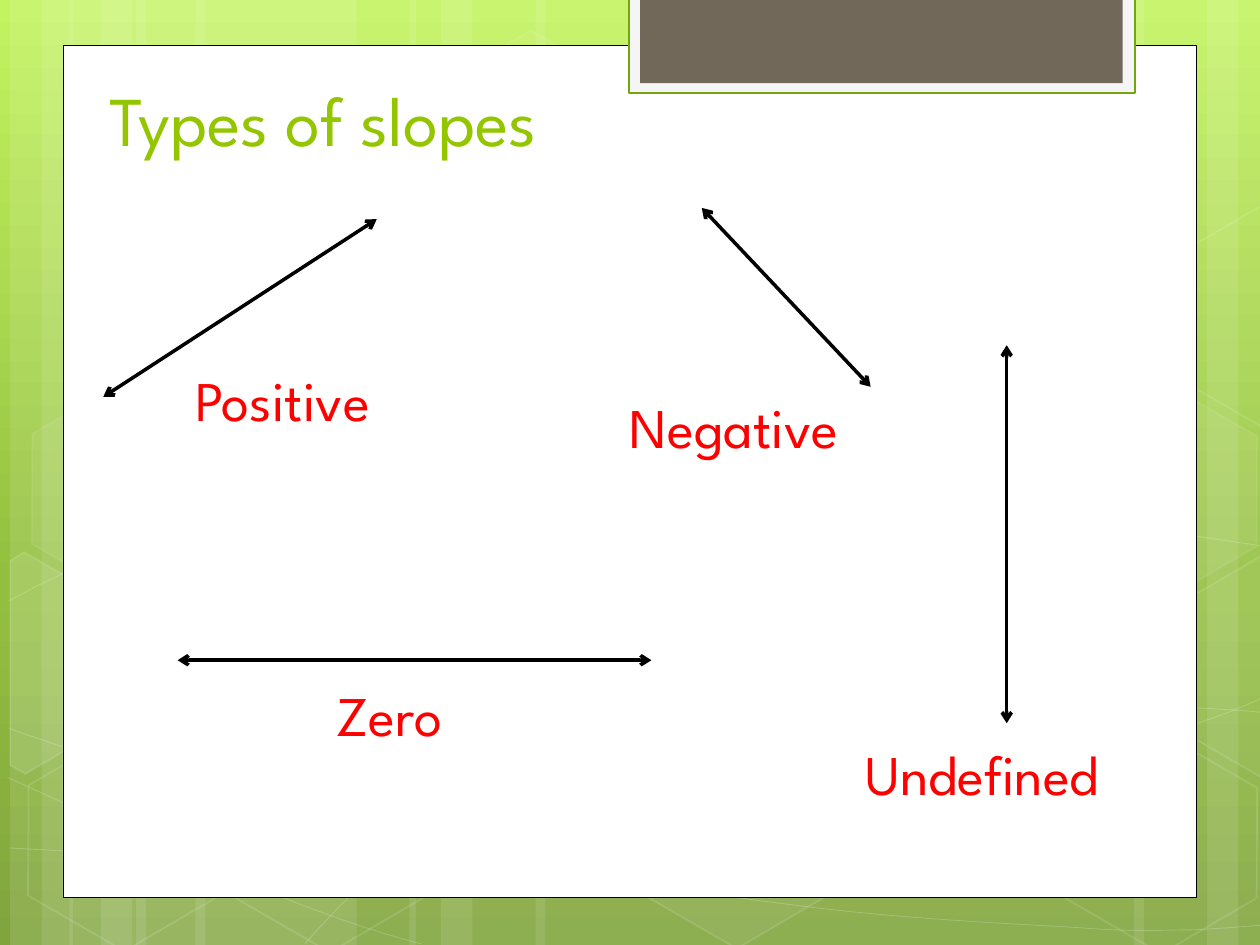
from copy import deepcopy
from math import cos, radians, sin
from pptx import Presentation
from pptx import util as u
from pptx.dml.color import RGBColor
from pptx.enum import shapes, text
from pptx.oxml.ns import qn
from lxml import etree

FONT = "League Spartan"
COLORS = {"white": "FFFFFF", "black": "000000", "frame": "F5F5F5", "edge": "74A510",
          "tab": "71685A", "title": "94C600", "label": "FF0000"}
GRADIENT = [(0, "C3F35F"), (0.62, "93BF3F"), (1, "81A53E")]
TILT = 30

STRIPES = [(1.08, 1.75), (0.08, 0.5), (0.33, 0.83), (1.55, 1.75), (0.55, 0.5), (0.8, 0.83),
           (7.33, 1.75), (9.58, 0.5), (9, 0.83), (4.25, 3.08), (3.25, 0.5), (3.5, 0.83)]
CURVES = [
    [(0.07, 6.73), (0.61, 6.76), (1.15, 6.79), (1.9, 6.78), (2.65, 6.77), (3.58, 6.75),
     (4.58, 6.65), (5.58, 6.55), (7, 6.36), (7.92, 6.17), (8.83, 5.98), (9.77, 5.68),
     (10.07, 5.51)],
    [(0.07, 4.77), (0.36, 4.61), (0.65, 4.46), (1.21, 4.31), (1.78, 4.16), (2.59, 3.94),
     (3.47, 3.87), (4.36, 3.8), (5.44, 3.79), (6.54, 3.87), (7.64, 3.95), (9.47, 4.26),
     (10.07, 4.34)],
    [(0.06, 6.17), (1.27, 6.72), (2.47, 7.27), (3.34, 7.49)],
    [(0.07, 5.78), (0.38, 5.89), (0.7, 6), (1.28, 6.16), (1.86, 6.31), (2.73, 6.56),
     (3.57, 6.73), (4.4, 6.9), (5.45, 7.08), (6.28, 7.18), (7.11, 7.29), (8, 7.33),
     (8.53, 7.36), (9.05, 7.4), (9.19, 7.38), (9.45, 7.38), (9.71, 7.37), (9.89, 7.35),
     (10.07, 7.34)],
    [(2.42, 7.49), (2.6, 7.29), (2.78, 7.09), (3.02, 6.91), (3.26, 6.73), (3.6, 6.53),
     (3.88, 6.39), (4.16, 6.25), (4.33, 6.19), (4.7, 6.09), (5.06, 5.99), (5.73, 5.85),
     (6.08, 5.78), (6.44, 5.71), (6.49, 5.71), (6.8, 5.69), (7.11, 5.66), (7.6, 5.63),
     (7.94, 5.62), (8.29, 5.61), (8.86, 5.62), (8.86, 5.62), (9.08, 5.62), (9.31, 5.62),
     (9.53, 5.62), (9.71, 5.63), (9.88, 5.64), (9.97, 5.65), (10.06, 5.66), (10.03, 5.65),
     (10.06, 5.66)],
]
HEXAGONS = [(3.34, 0.36, 4, 8), (4.97, 5.89, 6, 12), (0.11, 5.91, 0, 12), (0.14, 3.12, 7, 8),
            (1.74, 5.92, 0, 12), (7.53, 4.53, 10, 12), (8.34, 5.93, 0, 12), (8.34, 3.14, 7, 8)]
CUT_HEXAGONS = [
    ((0.36, 5.35), 10,
     [(0.08, 4.45), (0.19, 4.38), (0.96, 4.82), (0.95, 5.7), (0.2, 6.14), (0.08, 6.07)]),
    ((9.85, 5.2), 4,
     [(9.26, 4.85), (10.01, 4.41), (10.09, 4.46), (10.09, 6.13), (10.02, 6.17), (9.26, 5.73)]),
    ((9.85, 2.41), 0,
     [(9.26, 2.07), (10.01, 1.63), (10.1, 1.68), (10.09, 3.35), (10.02, 3.39), (9.26, 2.95)]),
]
PANELS = [((0.5, 0.36, 9, 6.76), "white", ("black", 0.5)),
          ((4.99, -0.02, 4.02, 0.76), "frame", ("edge", 1.25)),
          ((5.08, -0.02, 3.83, 0.68), "tab", None)]
TITLE = ("Types of slopes", (0.77, 0.37, 7.68, 0.95))
SLOPES = [("Positive", (1.45, 2.85, 2.09, 0.64), (0.82, 3.15, 2.99, 1.74)),
          ("Negative", (4.9, 3.07, 2.51, 0.64), (5.57, 1.65, 6.91, 3.07)),
          ("Zero", (2.57, 5.35, 1.57, 0.64), (1.41, 5.24, 5.17, 5.24)),
          ("Undefined", (6.77, 5.82, 2.58, 0.64), (7.99, 5.74, 7.99, 2.74))]


def cm(*inches):
    return [u.Cm(2.54 * v) for v in inches]


def rgb(name):
    return RGBColor.from_string(COLORS[name])


def paint(fill, color, alpha=100):
    if not alpha:
        fill.background()
        return
    fill.solid()
    fill.fore_color.rgb = rgb(color)
    if alpha < 100:
        clr = fill._xPr.find(".//" + qn("a:srgbClr"))
        etree.SubElement(clr, qn("a:alpha"), val=str(alpha * 1000))


def style(sp, color="white", alpha=100, line=None, line_alpha=100):
    sp.shadow.inherit = False
    paint(sp.fill, color, alpha)
    if line:
        paint(sp.line.fill, line[0], line_alpha)
        sp.line.width = u.Pt(line[1])
    else:
        sp.line.fill.background()


def add_shape(s, kind, at):
    return s.shapes.add_shape(kind, *cm(*at))


def add_outline(s, points, close):
    pts = [tuple(cm(*pt)) for pt in points]
    fb = s.shapes.build_freeform(*pts[0])
    fb.add_line_segments(pts[1:], close=close)
    return fb.convert_to_shape()


def add_curve(s, points):
    sp = add_outline(s, points, False)
    steps = list(sp._element.iter(qn("a:lnTo")))
    for i in range(0, len(steps), 3):
        curve = etree.SubElement(steps[i].getparent(), qn("a:cubicBezTo"))
        for step in steps[i:i + 3]:
            curve.append(step[0])
            step.getparent().remove(step)
    return sp


def turn_back(points, center):
    c, n = cos(radians(TILT)), sin(radians(TILT))
    offsets = [(x - center[0], y - center[1]) for x, y in points]
    return [(center[0] + x * c + y * n, center[1] - x * n + y * c) for x, y in offsets]


def add_text(s, words, at, size, color, **frame):
    tf = s.shapes.add_textbox(*cm(*at)).text_frame
    for name, value in {"word_wrap": True, **frame}.items():
        setattr(tf, name, value)
    r = tf.paragraphs[0].add_run()
    r.text = words
    for name, value in {"name": FONT, "size": u.Pt(size)}.items():
        setattr(r.font, name, value)
    r.font.color.rgb = rgb(color)


def add_arrow(s, ends):
    c = s.shapes.add_connector(shapes.MSO_CONNECTOR.STRAIGHT, *cm(*ends))
    paint(c.line.fill, "black")
    c.line.width = u.Pt(2)
    ln = c.line._get_or_add_ln()
    for end in ("a:headEnd", "a:tailEnd"):
        etree.SubElement(ln, qn(end), type="arrow")
    etree.SubElement(c._element.spPr, qn("a:effectLst"))


def add_background(s):
    fill = s.background.fill
    fill.gradient()
    fill.gradient_angle = 270
    stops = s._element.find(".//" + qn("a:gsLst"))
    stops.append(deepcopy(stops[0]))
    for stop, (position, color) in zip(fill.gradient_stops, GRADIENT):
        stop.position = position
        stop.color.rgb = RGBColor.from_string(color)


def main():
    prs = Presentation()
    prs.slide_width, prs.slide_height = cm(10, 7.5)
    s = prs.slides.add_slide(prs.slide_layouts[6])
    add_background(s)
    kinds = shapes.MSO_SHAPE

    for left, width in STRIPES:
        style(add_shape(s, kinds.RECTANGLE, (left, 0, width, 7.5)), alpha=10)
    for points in CURVES:
        style(add_curve(s, points), alpha=0, line=("white", 0.5), line_alpha=20)
    for left, top, alpha, line_alpha in HEXAGONS:
        sp = add_shape(s, kinds.HEXAGON, (left, top, 1.75, 1.52))
        sp.adjustments[0], sp.adjustments[1] = 0.285, 1.155
        sp.rotation = TILT
        style(sp, alpha=alpha, line=("white", 1), line_alpha=line_alpha)
    for center, alpha, points in CUT_HEXAGONS:
        sp = add_outline(s, turn_back(points, center), True)
        sp.rotation = TILT
        style(sp, alpha=alpha, line=("white", 1), line_alpha=12)
    for at, color, line in PANELS:
        style(add_shape(s, kinds.RECTANGLE, at), color, line=line)

    add_text(s, *TITLE, 40, "title", vertical_anchor=text.MSO_ANCHOR.BOTTOM)
    for words, at, ends in SLOPES:
        add_arrow(s, ends)
        add_text(s, words, at, 32, "label", auto_size=text.MSO_AUTO_SIZE.SHAPE_TO_FIT_TEXT)

    prs.save("out.pptx")


if __name__ == "__main__":
    main()
